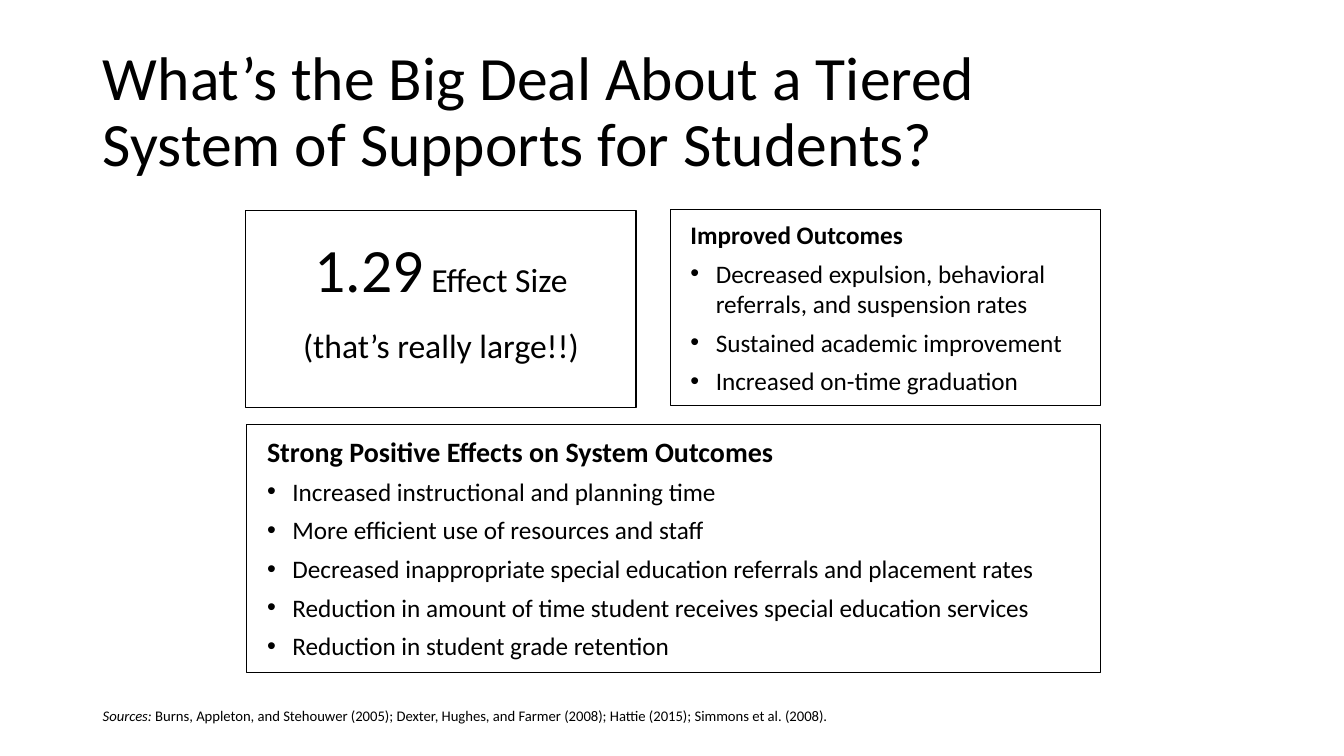
from lxml.etree import SubElement
from pptx import Presentation
from pptx.dml.color import RGBColor
from pptx.enum.shapes import MSO_SHAPE as Shape
from pptx.enum.text import MSO_ANCHOR as Anchor, MSO_AUTO_SIZE as AutoSize, PP_ALIGN as Align
from pptx.oxml.ns import qn
from pptx.util import Cm, Pt

COLORS = {"ink": "000000", "paper": "FFFFFF"}
FONT = "Calibri"
INSET = 0.25
WIDE_INSET = 0.51
BULLET_INDENT = 0.64

TITLE = "What’s the Big Deal About a Tiered \vSystem of Supports for Students?"
STUDENT_OUTCOMES = [
    "Decreased expulsion, behavioral referrals, and suspension rates",
    "Sustained academic improvement",
    "Increased on-time graduation",
]
SYSTEM_OUTCOMES = [
    "Increased instructional and planning time",
    "More efficient use of resources and staff",
    "Decreased inappropriate special education referrals and placement rates",
    "Reduction in amount of time student receives special education services",
    "Reduction in student grade retention",
]
CITATIONS = (
    " Burns, Appleton, and Stehouwer (2005); Dexter, Hughes, and Farmer (2008); "
    "Hattie (2015); Simmons et al. (2008)."
)


def color(name):
    return RGBColor.from_string(COLORS[name])


def style(run, size, bold=False, italic=False):
    font = run.font
    font.name, font.size = FONT, Pt(size)
    font.bold, font.italic = bold, italic
    font.color.rgb = color("ink")


def write(paragraph, text, size, bold=False, italic=False):
    paragraph.text = text
    for run in paragraph.runs:
        style(run, size, bold, italic)


def append(paragraph, text, size):
    run = paragraph.add_run()
    run.text = text
    style(run, size)


def add_panel(slide, box, left_inset=INSET, top_inset=INSET):
    panel = slide.shapes.add_shape(Shape.RECTANGLE, *map(Cm, box))
    panel.shadow.inherit = False
    panel.fill.background()
    panel.line.color.rgb = color("ink")
    panel.line.width = Pt(0.75)
    frame = panel.text_frame
    frame.word_wrap = True
    frame.auto_size = AutoSize.SHAPE_TO_FIT_TEXT
    frame.vertical_anchor = Anchor.TOP
    frame.margin_left, frame.margin_top = Cm(left_inset), Cm(top_inset)
    frame.margin_right = frame.margin_bottom = Cm(INSET)
    return frame


def add_bullet(frame, text, size):
    bullet = frame.add_paragraph()
    write(bullet, text, size)
    bullet.level = 1
    bullet.alignment = Align.LEFT
    bullet.space_before = Pt(6)
    properties = bullet._p.get_or_add_pPr()
    properties.set("marL", str(Cm(BULLET_INDENT)))
    properties.set("indent", str(-Cm(BULLET_INDENT)))
    SubElement(properties, qn("a:buFont"), typeface="Arial")
    SubElement(properties, qn("a:buChar"), char="•")


def place_title(slide, box):
    title = slide.shapes.title
    title.left, title.top, title.width, title.height = map(Cm, box)
    frame = title.text_frame
    frame.word_wrap = True
    frame.auto_size = AutoSize.NONE
    frame.vertical_anchor = Anchor.MIDDLE
    heading = frame.paragraphs[0]
    write(heading, TITLE, 44)
    heading.alignment = Align.LEFT
    heading.line_spacing = 0.9


def add_effect_size(slide, box):
    frame = add_panel(slide, box, top_inset=WIDE_INSET)
    figure, remark = frame.paragraphs[0], frame.add_paragraph()
    write(figure, "1.29", 44)
    append(figure, " Effect Size", 24)
    write(remark, "(that’s really large!!)", 24)
    remark.line_spacing = 1.5
    figure.alignment = remark.alignment = Align.CENTER


def add_outcomes(slide, box, heading, heading_size, outcomes, space_after=0):
    frame = add_panel(slide, box, left_inset=WIDE_INSET)
    write(frame.paragraphs[0], heading, heading_size, bold=True)
    frame.paragraphs[0].alignment = Align.LEFT
    for outcome in outcomes:
        add_bullet(frame, outcome, 18)
    frame.paragraphs[-1].space_after = Pt(space_after)


def add_sources(slide, box):
    frame = slide.shapes.add_textbox(*map(Cm, box)).text_frame
    frame.word_wrap = True
    frame.auto_size = AutoSize.SHAPE_TO_FIT_TEXT
    sources = frame.paragraphs[0]
    write(sources, "Sources:", 10.5, italic=True)
    append(sources, CITATIONS, 10.5)


def main():
    deck = Presentation()
    deck.slide_width, deck.slide_height = Cm(33.87), Cm(19.05)
    slide = deck.slides.add_slide(deck.slide_layouts.get_by_name("Title Only"))
    slide.background.fill.solid()
    slide.background.fill.fore_color.rgb = color("paper")
    place_title(slide, (2.34, 1.02, 29.21, 3.68))
    add_effect_size(slide, (6.2, 5.31, 9.83, 4.95))
    add_outcomes(slide, (16.89, 5.28, 10.85, 4.95), "Improved Outcomes", 18,
                 STUDENT_OUTCOMES, space_after=6)
    add_outcomes(slide, (6.22, 10.69, 21.51, 6.27),
                 "Strong Positive Effects on System Outcomes", 20, SYSTEM_OUTCOMES)
    add_sources(slide, (2.34, 17.68, 21.54, 0.71))
    deck.save("out.pptx")


if __name__ == "__main__":
    main()
